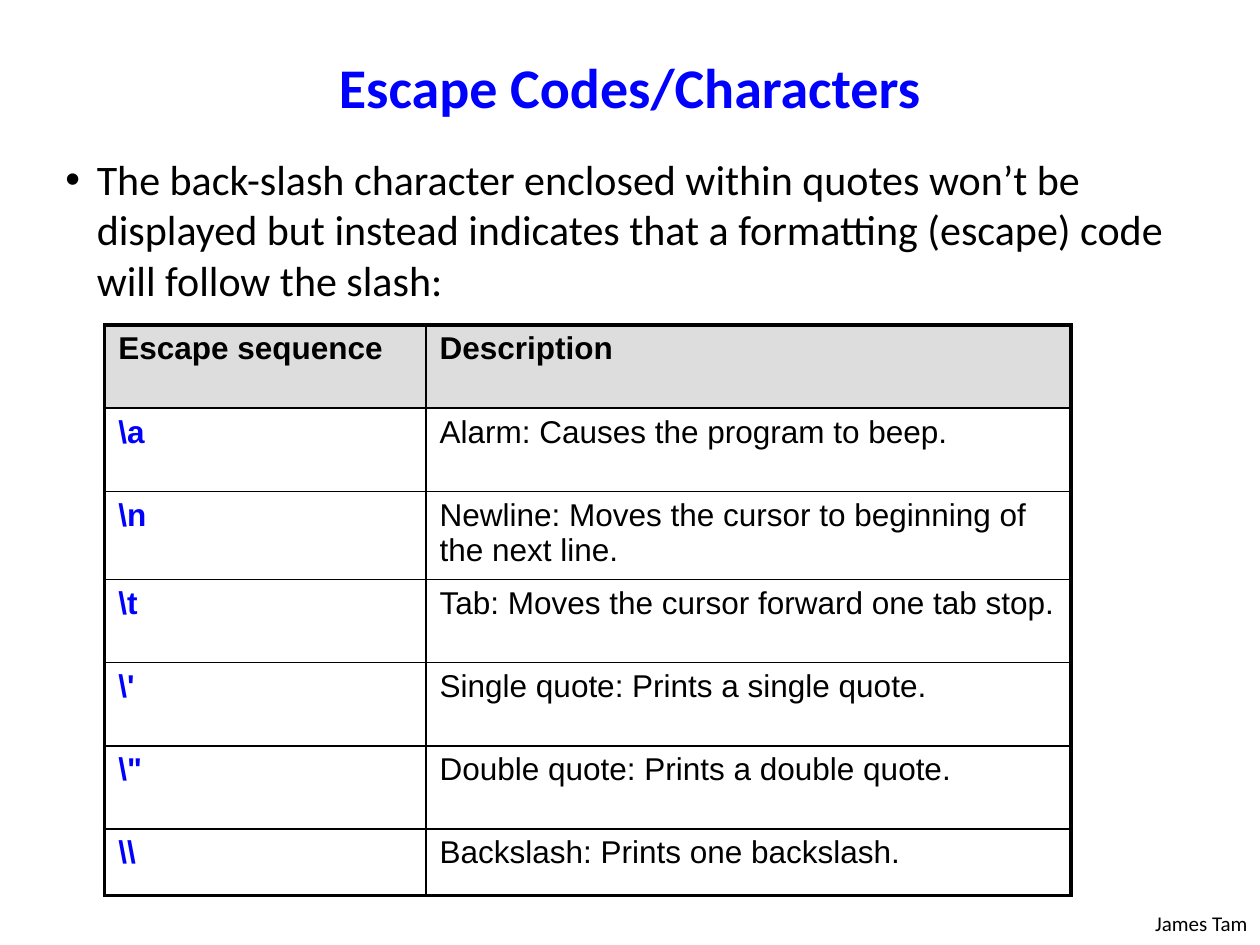
from dataclasses import dataclass

from lxml import etree
from pptx import Presentation
from pptx import util as u
from pptx.dml.color import RGBColor
from pptx.enum import text
from pptx.oxml.ns import qn


@dataclass(frozen=True)
class Theme:
    ink: RGBColor = RGBColor(0, 0, 0)
    accent: RGBColor = RGBColor(0, 0, 255)
    header: RGBColor = RGBColor(0xDD, 0xDD, 0xDD)
    body_font: str = "Calibri"
    table_font: str = "Arial"
    title_size: int = 32
    body_size: int = 24
    table_size: int = 18
    footer_size: int = 12
    thin: float = 1
    thick: float = 2.25


theme = Theme()


def write(frame, words, size, font=theme.body_font, color=theme.ink, bold=False):
    """Fill a text frame with one formatted paragraph and return it."""
    frame.word_wrap = True
    frame.text = words
    para = frame.paragraphs[0]
    for span in para.runs:
        span.font.name = font
        span.font.size = u.Pt(size)
        span.font.bold = bold
        span.font.color.rgb = color
    return para


def add_border(cell, side, width):
    line = etree.SubElement(cell._tc.get_or_add_tcPr(), qn(f"a:ln{side}"), w=str(u.Pt(width)))
    fill = etree.SubElement(line, qn("a:solidFill"))
    etree.SubElement(fill, qn("a:srgbClr"), val=str(theme.ink))


deck = Presentation()
deck.slide_width, deck.slide_height = u.Inches(10), u.Inches(7.5)
page = deck.slides.add_slide(deck.slide_layouts[6])

# Author footer
footer = page.shapes.add_textbox(u.Inches(8.67), u.Inches(7.18), u.Inches(1.33), u.Inches(0.3))
para = write(footer.text_frame, "James Tam", theme.footer_size)
para.alignment = text.PP_ALIGN.RIGHT

# Introductory bullet
intro = page.shapes.add_textbox(u.Inches(0.42), u.Inches(1.17), u.Inches(8.97), u.Inches(5.76))
para = write(
    intro.text_frame,
    "The back-slash character enclosed within quotes won’t be displayed but instead "
    "indicates that a formatting (escape) code will follow the slash:",
    theme.body_size,
)
bullet = para._p.get_or_add_pPr()
bullet.set("marL", str(u.Inches(0.25)))
bullet.set("indent", str(-u.Inches(0.25)))
etree.SubElement(bullet, qn("a:buFont"), typeface="Arial")
etree.SubElement(bullet, qn("a:buChar"), char="•")

# Title
title = page.shapes.add_textbox(u.Inches(0.5), u.Inches(0.28), u.Inches(9), u.Inches(0.8))
title.text_frame.vertical_anchor = text.MSO_ANCHOR.MIDDLE
para = write(title.text_frame, "Escape Codes/Characters", theme.title_size,
             color=theme.accent, bold=True)
para.alignment = text.PP_ALIGN.CENTER

# Escape code table
entries = [
    ("Escape sequence", "Description"),
    (r"\a", "Alarm: Causes the program to beep."),
    (r"\n", "Newline: Moves the cursor to beginning of the next line."),
    (r"\t", "Tab: Moves the cursor forward one tab stop."),
    (r"\'", "Single quote: Prints a single quote."),
    (r'\"', "Double quote: Prints a double quote."),
    (r"\\", "Backslash: Prints one backslash."),
]
widths = [2.55, 5.12]
heights = [0.66, 0.66, 0.7, 0.66, 0.66, 0.66, 0.53]
last_row, last_col = len(heights) - 1, len(widths) - 1

table = page.shapes.add_table(
    len(heights), len(widths),
    u.Inches(0.83), u.Inches(2.58), u.Inches(sum(widths)), u.Inches(sum(heights)),
).table
table.first_row = table.horz_banding = False
for column, width in zip(table.columns, widths):
    column.width = u.Inches(width)
for row, height in zip(table.rows, heights):
    row.height = u.Inches(height)

for r, entry in enumerate(entries):
    for c, words in enumerate(entry):
        cell = table.cell(r, c)
        cell.margin_left = cell.margin_right = u.Inches(0.11)
        cell.margin_top = cell.margin_bottom = u.Inches(0.05)
        is_header, is_code = r == 0, r > 0 and c == 0
        write(cell.text_frame, words, theme.table_size, theme.table_font,
              theme.accent if is_code else theme.ink, is_header or is_code)

        outer = {"L": c == 0, "R": c == last_col, "T": r == 0, "B": r == last_row}
        for side, on_edge in outer.items():
            add_border(cell, side, theme.thick if on_edge else theme.thin)
        if is_header:
            cell.fill.solid()
            cell.fill.fore_color.rgb = theme.header
        else:
            cell.fill.background()

deck.save("out.pptx")
